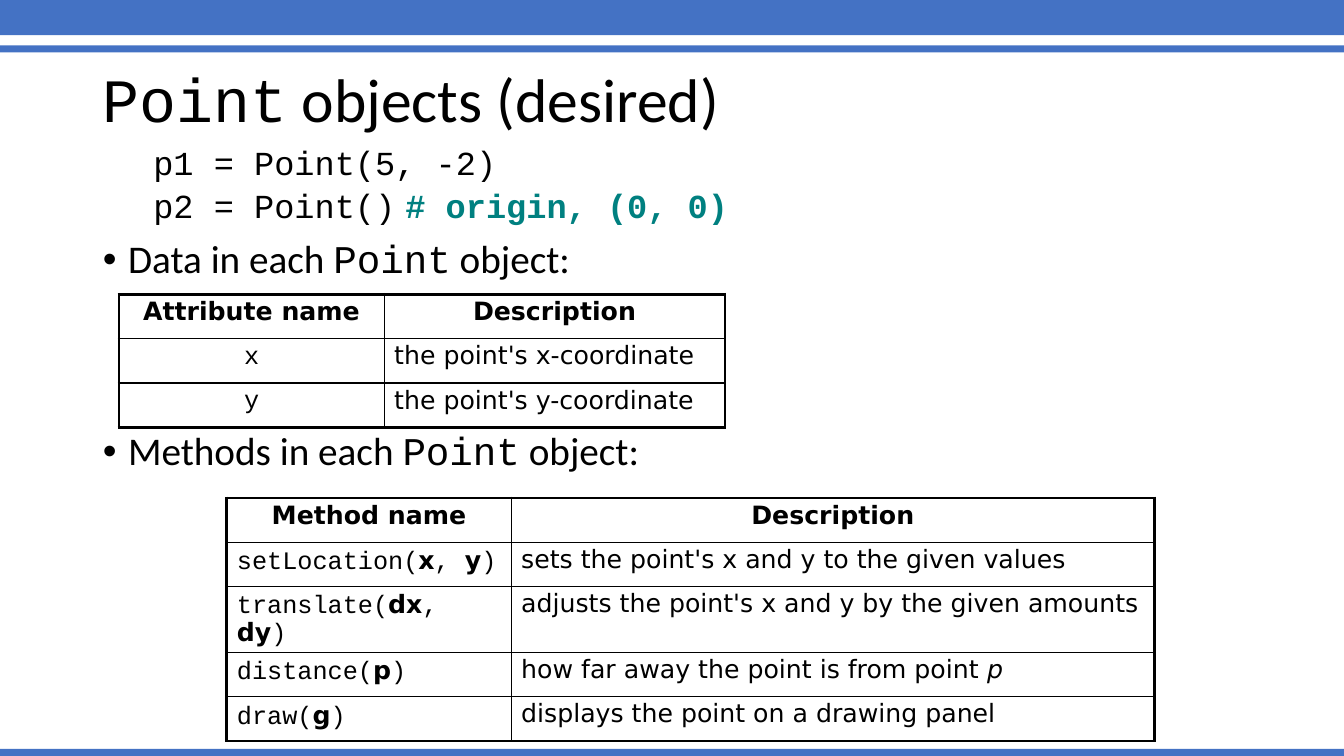
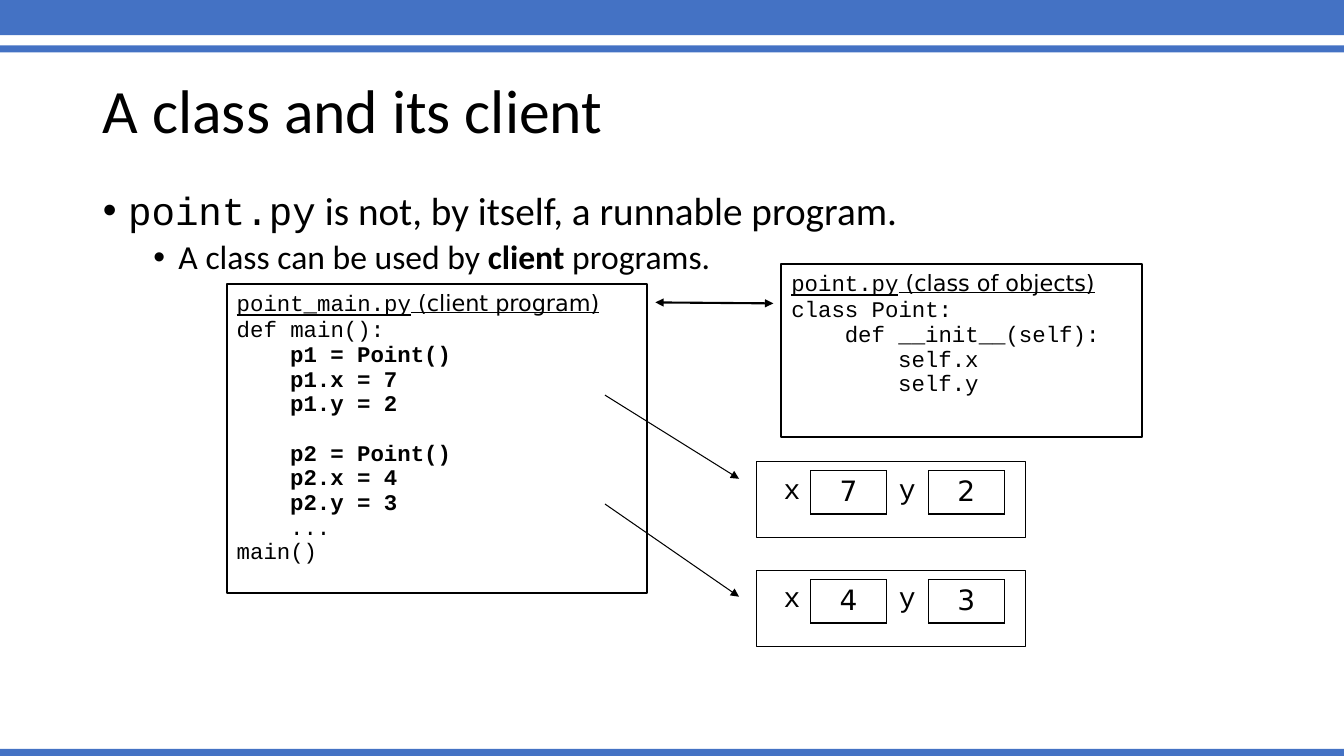
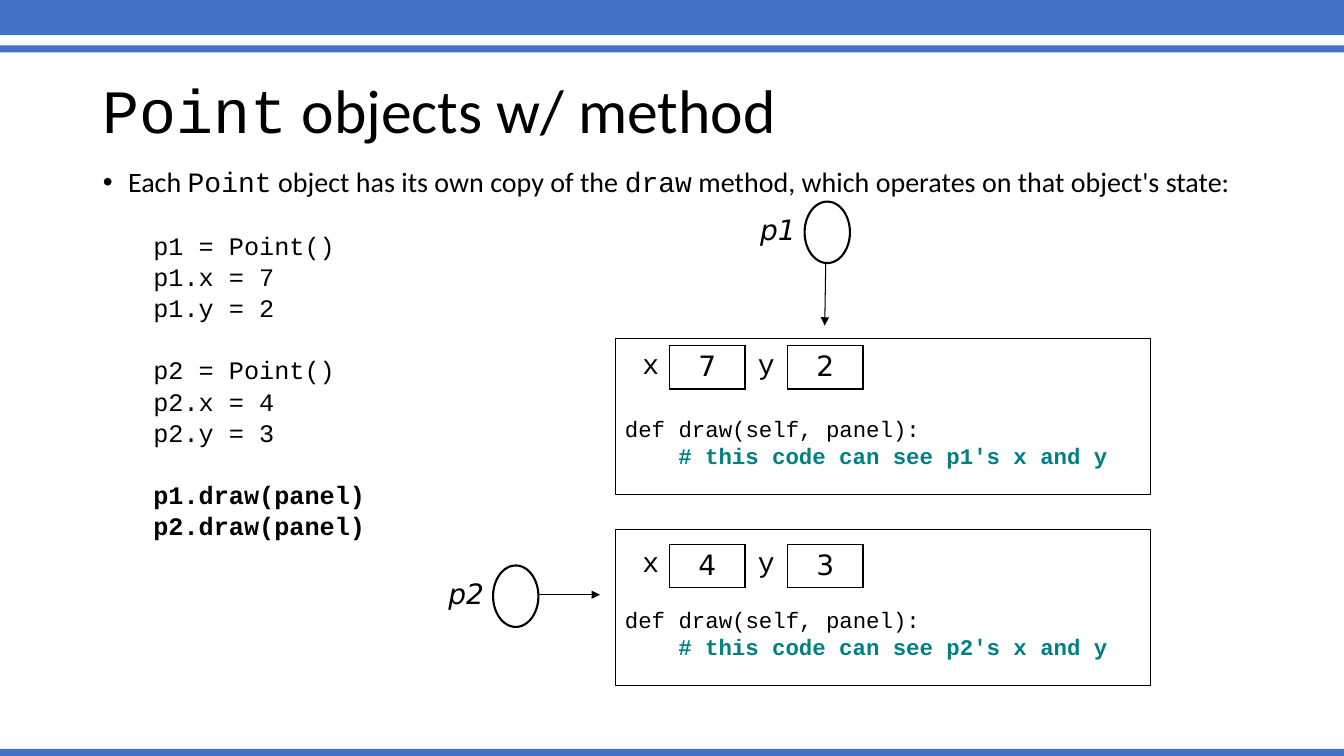
from dataclasses import dataclass

import lxml.etree
import pptx
import pptx.dml.color
import pptx.enum.shapes
import pptx.enum.text
import pptx.oxml.ns
import pptx.util

Inches = pptx.util.Inches
Pt = pptx.util.Pt
qn = pptx.oxml.ns.qn
SHAPES = pptx.enum.shapes.MSO_SHAPE
ALIGN = pptx.enum.text.PP_ALIGN


@dataclass(frozen=True)
class Theme:
    band: str = "4472C4"
    ink: str = "000000"
    paper: str = "FFFFFF"
    comment: str = "008080"
    text_font: str = "Calibri"
    code_font: str = "Courier New"
    label_font: str = "DejaVu Sans"
    title_size: int = 44
    bullet_size: int = 28
    detail_size: int = 24
    value_size: int = 20
    table_size: int = 18
    code_size: int = 16
    thick: float = 2.25
    medium: float = 1.5
    cell_line: float = 1
    thin: float = 0.75
    code_step: float = 0.53  # four characters of code at code_size


THEME = Theme()


@dataclass(frozen=True)
class Run:
    text: str
    font: str = THEME.text_font
    bold: bool = False
    italic: bool = False
    underline: bool = False
    color: str = THEME.ink


def code(text, **style):
    return Run(text, THEME.code_font, **style)


def label(text, **style):
    return Run(text, THEME.label_font, **style)


def comment(text):
    return code(text, bold=True, color=THEME.comment)


# Text and line helpers
def rgb(value):
    return pptx.dml.color.RGBColor.from_string(value)


def inches(box):
    return [Inches(length) for length in box]


def write(paragraph, runs, size, align=ALIGN.LEFT, spacing=None, before=0):
    paragraph.alignment = align
    paragraph.space_before = Pt(before)
    if spacing:
        paragraph.line_spacing = spacing
    for part in runs:
        run = paragraph.add_run()
        run.text = part.text
        font = run.font
        font.name, font.size = part.font, Pt(size)
        font.bold, font.italic, font.underline = part.bold, part.italic, part.underline
        font.color.rgb = rgb(part.color)


def next_paragraph(frame):
    first = frame.paragraphs[0]
    return frame.add_paragraph() if first.runs else first


def indent(paragraph, margin, first=0.0, bullet=None, tab=None):
    properties = paragraph._p.get_or_add_pPr()
    properties.set("marL", str(Inches(margin)))
    properties.set("indent", str(Inches(first)))
    if bullet:
        lxml.etree.SubElement(properties, qn("a:buChar")).set("char", bullet)
    else:
        lxml.etree.SubElement(properties, qn("a:buNone"))
    if tab:
        stops = lxml.etree.SubElement(properties, qn("a:tabLst"))
        stop = lxml.etree.SubElement(stops, qn("a:tab"))
        stop.set("pos", str(Inches(tab)))
        stop.set("algn", "l")


def outlined(slide, kind, box, width, fill=None):
    shape = slide.shapes.add_shape(kind, *inches(box))
    shape.shadow.inherit = False
    if fill:
        shape.fill.solid()
        shape.fill.fore_color.rgb = rgb(fill)
    else:
        shape.fill.background()
    shape.line.color.rgb = rgb(THEME.ink)
    shape.line.width = Pt(width)
    shape.text_frame.word_wrap = True
    shape.text_frame.vertical_anchor = pptx.enum.text.MSO_ANCHOR.TOP
    return shape


def arrow(slide, start, end, width=THEME.thin, ends=("tailEnd",)):
    straight = pptx.enum.shapes.MSO_CONNECTOR.STRAIGHT
    connector = slide.shapes.add_connector(straight, *inches(start + end))
    connector.line.color.rgb = rgb(THEME.ink)
    connector.line.width = Pt(width)
    properties = connector.element.spPr
    line = properties.find(qn("a:ln"))
    for name in ends:
        lxml.etree.SubElement(line, qn("a:" + name)).set("type", "triangle")
    lxml.etree.SubElement(properties, qn("a:effectLst"))


# Shared slide parts
def add_bands(presentation, slide):
    master_tree = presentation.slide_master.placeholders[0].element.getparent()
    for number, (top, height) in enumerate([(0, 0.35), (0.45, 0.07), (7.43, 0.07)]):
        band = slide.shapes.add_shape(SHAPES.RECTANGLE, *inches((0, top, 13.33, height)))
        band.shadow.inherit = False
        band.fill.solid()
        band.fill.fore_color.rgb = rgb(THEME.band)
        band.line.fill.background()
        band.name = f"Band {number + 1}"
        band.element.nvSpPr.cNvPr.id = 20 + number
        master_tree.insert(2 + number, band.element)


def place(placeholder, box):
    placeholder.left, placeholder.top, placeholder.width, placeholder.height = inches(box)
    frame = placeholder.text_frame
    frame.word_wrap = True
    frame.auto_size = pptx.enum.text.MSO_AUTO_SIZE.NONE
    return frame


def start_slide(presentation, title, title_top, body_top):
    slide = presentation.slides.add_slide(presentation.slide_layouts[0])
    frame = place(slide.shapes.title, (0.92, title_top, 11.5, 1.45))
    frame.vertical_anchor = pptx.enum.text.MSO_ANCHOR.MIDDLE
    write(frame.paragraphs[0], title, THEME.title_size, spacing=0.9)
    body = place(slide.placeholders[1], (0.92, body_top, 11.5, 6.76 - body_top))
    return slide, body


def bullet(body, runs, size, level=0, spacing=0.9, before=10):
    paragraph = next_paragraph(body)
    paragraph.level = level
    write(paragraph, runs, size, spacing=spacing, before=before)
    indent(paragraph, 0.25 + 0.5 * level, -0.25, "•")


def code_line(body, runs, size, spacing=0.9, before=5, tab=None):
    paragraph = next_paragraph(body)
    paragraph.level = 1
    write(paragraph, runs, size, spacing=spacing, before=before)
    indent(paragraph, 0, 0.5, tab=tab)


# Tables
def set_borders(cell, widths):
    properties = cell._tc.get_or_add_tcPr()
    for position, (side, width) in enumerate(zip("LRTB", widths)):
        line = lxml.etree.Element(qn("a:ln" + side))
        properties.insert(position, line)
        if width:
            line.set("w", str(Pt(width)))
            fill = lxml.etree.SubElement(line, qn("a:solidFill"))
            lxml.etree.SubElement(fill, qn("a:srgbClr")).set("val", THEME.ink)
        else:
            lxml.etree.SubElement(line, qn("a:noFill"))


def add_grid(slide, left, top, columns, rows):
    box = (left, top, sum(columns), sum(rows))
    table = slide.shapes.add_table(len(rows), len(columns), *inches(box)).table
    table.first_row = table.horz_banding = False
    for column, width in zip(table.columns, columns):
        column.width = Inches(width)
    for row, height in zip(table.rows, rows):
        row.height = Inches(height)
    for cell in table.iter_cells():
        cell.fill.background()
    return table


def description_table(slide, left, top, columns, rows, content, name_align):
    table = add_grid(slide, left, top, columns, rows)
    last = len(rows) - 1
    for r, line in enumerate(content):
        for c, runs in enumerate(line):
            cell = table.cell(r, c)
            align = ALIGN.CENTER if r == 0 else (name_align, ALIGN.LEFT)[c]
            write(cell.text_frame.paragraphs[0], runs, THEME.table_size, align, 0.9)
            outer = (c == 0, c == 1, r == 0, r == last)
            set_borders(cell, [THEME.thick if edge else THEME.cell_line for edge in outer])


def value_table(slide, left, top, x, y):
    table = add_grid(slide, left, top, (0.37, 0.75, 0.42, 0.75), (0.43,))
    line = THEME.cell_line
    borders = ((0, line, 0, 0), (line,) * 4, (line, line, 0, 0), (line,) * 4)
    runs = (code("x"), label(x), code("y"), label(y))
    for c, (run, widths) in enumerate(zip(runs, borders)):
        cell = table.cell(0, c)
        write(cell.text_frame.paragraphs[0], [run], THEME.value_size, ALIGN.CENTER)
        set_borders(cell, widths)


# Diagram parts
def program_box(slide, box, file_name, role, lines):
    frame = outlined(slide, SHAPES.RECTANGLE, box, THEME.medium).text_frame
    heading = [code(file_name, underline=True), label(role, underline=True)]
    write(frame.paragraphs[0], heading, THEME.code_size)
    for depth, run, before in lines:
        paragraph = frame.add_paragraph()
        write(paragraph, [run], THEME.code_size, spacing=0.5, before=before)
        indent(paragraph, depth * THEME.code_step)


def state_box(slide, left, top, x, y):
    outlined(slide, SHAPES.RECTANGLE, (left, top, 2.67, 0.75), THEME.thin)
    value_table(slide, left + 0.17, top + 0.09, x, y)


def method_box(slide, left, top, table_offset, name, x, y):
    box = (left, top, 5.31, 1.55)
    frame = outlined(slide, SHAPES.RECTANGLE, box, THEME.thin).text_frame
    frame.margin_top = Inches(0.76)
    write(frame.paragraphs[0], [code("def draw(self, panel):")], THEME.code_size)
    note = frame.add_paragraph()
    write(note, [comment(f"# this code can see {name}'s x and y")], THEME.code_size)
    indent(note, THEME.code_step)
    value_table(slide, left + 0.17, top + table_offset, x, y)


def reference(slide, left, top, name, start, end):
    """Name and oval; the arrow's ends are offsets from the oval's corner."""
    frame = slide.shapes.add_textbox(*inches((left - 1.11, top + 0.06, 1.12, 0.49))).text_frame
    frame.word_wrap = True
    write(frame.paragraphs[0], [label(name, italic=True)], THEME.value_size, ALIGN.RIGHT)
    arrow(slide, (left + start[0], top + start[1]), (left + end[0], top + end[1]))
    outlined(slide, SHAPES.OVAL, (left, top, 0.45, 0.61), THEME.medium, THEME.paper)


# Slides
def desired_slide(presentation):
    title = [code("Point"), Run(" objects (desired)")]
    slide, body = start_slide(presentation, title, 0.29, 1.4)
    code_line(body, [code("p1 = Point(5, -2)")], THEME.detail_size)
    code_line(body, [code("p2 = Point()\t"), comment("# origin, (0, 0)")],
              THEME.detail_size, tab=4.9)
    for kind, before in (("Data", 10), ("Methods", 107)):
        runs = [Run(f"{kind} in each "), code("Point"), Run(" object:")]
        bullet(body, runs, THEME.bullet_size, before=before)

    def header(name):
        return [label(name, bold=True)], [label("Description", bold=True)]

    def method(name, *arguments):
        runs = [code(name + "(")]
        for position, argument in enumerate(arguments):
            if position:
                runs.append(code(", "))
            runs.append(label(argument, bold=True))
        return runs + [code(")")]

    methods = [
        header("Method name"),
        (method("setLocation", "x", "y"),
         [label("sets the point's x and y to the given values")]),
        (method("translate", "dx", "dy"),
         [label("adjusts the point's x and y by the given amounts")]),
        (method("distance", "p"),
         [label("how far away the point is from point "), label("p", italic=True)]),
        (method("draw", "g"), [label("displays the point on a drawing panel")]),
    ]
    description_table(slide, 2.25, 4.94, (2.82, 6.38), (0.44, 0.44, 0.65, 0.44, 0.44),
                      methods, ALIGN.LEFT)
    attributes = [header("Attribute name")]
    attributes += [([code(name)], [label(f"the point's {name}-coordinate")]) for name in "xy"]
    description_table(slide, 1.18, 2.92, (2.63, 3.38), (0.44,) * 3, attributes, ALIGN.CENTER)
    return slide


def client_slide(presentation):
    slide, body = start_slide(presentation, [Run("A class and its client")], 0.4, 1.85)
    bullet(body, [code("point.py"), Run(" is not, by itself, a runnable program.")],
           THEME.bullet_size)
    bullet(body, [Run("A class can be used by "), Run("client", bold=True), Run(" programs.")],
           THEME.detail_size, level=1, before=5)

    # Client program and class
    gap, group_gap = 8, 25.6
    client = [(0, code("def main():"), gap)]
    for name, x, y, before in (("p1", 7, 2, gap), ("p2", 4, 3, group_gap)):
        client += [(1, code(f"{name} = Point()", bold=True), before),
                   (1, code(f"{name}.x = {x}", bold=True), gap),
                   (1, code(f"{name}.y = {y}", bold=True), gap)]
    client += [(1, code("..."), gap), (0, code("main()"), gap)]
    program_box(slide, (2.25, 2.82, 4.17, 3.06), "point_main.py", " (client program)", client)
    lines = ["class Point:", "def __init__(self):", "self.x", "self.y"]
    members = [(depth, code(text), gap) for depth, text in zip((0, 1, 2, 2), lines)]
    program_box(slide, (7.75, 2.62, 3.58, 1.72), "point.py", " (class of objects)", members)

    # Objects and arrows
    state_box(slide, 7.5, 4.58, "7", "2")
    state_box(slide, 7.5, 5.66, "4", "3")
    arrow(slide, (6.5, 3), (7.67, 3.01), THEME.medium, ("headEnd", "tailEnd"))
    arrow(slide, (6, 3.92), (7.33, 4.75))
    arrow(slide, (6, 5), (7.33, 5.92))


def method_slide(presentation):
    title = [code("Point"), Run(" objects w/ method")]
    slide, body = start_slide(presentation, title, 0.4, 1.55)
    bullet(body, [Run("Each "), code("Point"), Run(" object has its own copy of the "),
                  code("draw"), Run(" method, which operates on that object's state:")],
           THEME.value_size, spacing=1.1)
    groups = [["p1 = Point()", "p1.x = 7", "p1.y = 2"],
              ["p2 = Point()", "p2.x = 4", "p2.y = 3"],
              ["p1.draw(panel)", "p2.draw(panel)"]]
    for group in groups:
        for position, text in enumerate(group):
            run = code(text, bold=group is groups[-1])
            code_line(body, [run], THEME.table_size, 0.8, 5 if position else 27)

    # Objects with their references
    method_box(slide, 6.1, 3.36, 0.07, "p1", "7", "2")
    method_box(slide, 6.1, 5.25, 0.15, "p2", "4", "3")
    reference(slide, 4.89, 5.61, "p2", (0.45, 0.29), (1.06, 0.29))
    reference(slide, 7.98, 2, "p1", (0.21, 0.61), (0.2, 1.23))


def main():
    presentation = pptx.Presentation()
    presentation.slide_width, presentation.slide_height = inches((13.33, 7.5))
    for number, layout in enumerate(list(presentation.slide_layouts)):
        if number != 1:
            presentation.slide_layouts.remove(layout)
    first = desired_slide(presentation)
    add_bands(presentation, first)
    client_slide(presentation)
    method_slide(presentation)
    presentation.save("out.pptx")


if __name__ == "__main__":
    main()
